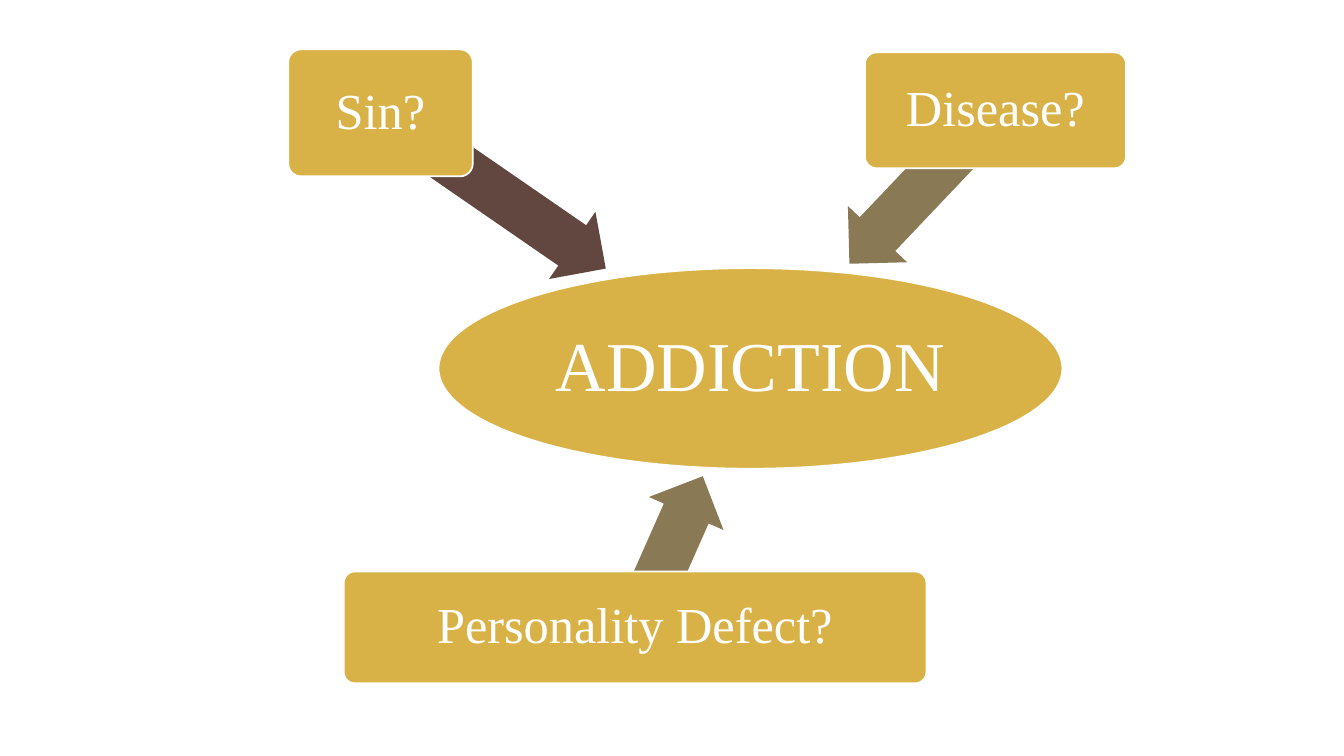
from pptx import Presentation
from pptx.dml.color import RGBColor
from pptx.enum.shapes import MSO_SHAPE as Shape
from pptx.enum.text import MSO_ANCHOR as Anchor, PP_ALIGN as Align
from pptx.util import Pt

GOLD, BROWN, OLIVE, WHITE = "D9B247", "614740", "8A7955", "FFFFFF"


def color(value):
    return RGBColor.from_string(value)


class Diagram:
    font = "Times New Roman"
    arrow_height = 58.3

    def __init__(self, page):
        self.page = page

    def shape(self, kind, bounds, fill):
        shape = self.page.shapes.add_shape(kind, *map(Pt, bounds))
        shape.shadow.inherit = False
        shape.fill.solid()
        shape.fill.fore_color.rgb = color(fill)
        return shape

    def node(self, kind, bounds, label, size, inset):
        """Add a gold shape with a white outline and a centred label."""
        node = self.shape(kind, bounds, GOLD)
        node.line.color.rgb = color(WHITE)
        node.line.width = Pt(1.25)
        frame = node.text_frame
        frame.word_wrap = True
        frame.vertical_anchor = Anchor.MIDDLE
        frame.margin_left = frame.margin_right = Pt(inset)
        frame.margin_top = frame.margin_bottom = Pt(inset)
        frame.text = label
        para = frame.paragraphs[0]
        para.alignment = Align.CENTER
        para.line_spacing = 0.9
        span = para.runs[0]
        span.font.name = self.font
        span.font.size = Pt(size)
        span.font.color.rgb = color(WHITE)
        return node

    def topic(self, bounds, label):
        self.node(Shape.OVAL, bounds, label, size=50, inset=2)

    def cause(self, bounds, label):
        box = self.node(Shape.ROUNDED_RECTANGLE, bounds, label, size=36, inset=5)
        box.adjustments[0] = 0.1

    def arrow(self, left, top, length, angle, fill):
        bounds = (left, top, length, self.arrow_height)
        arrow = self.shape(Shape.LEFT_ARROW, bounds, fill)
        arrow.line.fill.background()
        arrow.adjustments[0] = 0.6
        arrow.adjustments[1] = 0.5
        arrow.rotation = angle


def main():
    deck = Presentation()
    deck.slide_width, deck.slide_height = Pt(960), Pt(540)
    diagram = Diagram(deck.slides.add_slide(deck.slide_layouts[6]))

    diagram.topic((313.2, 191.5, 445.7, 143.3), "ADDICTION")
    causes = [
        ("Sin?", (205.9, 35.3, 131.8, 90.7), (254.9, 107.3, 195.1, 214.6, BROWN)),
        ("Disease?", (617.8, 37.4, 186.5, 82.8), (583.2, 104.4, 151.2, 313.5, OLIVE)),
        ("Personality Defect?", (245.5, 408.2, 416.2, 79.9),
         (419, 365, 118.1, 113.9, OLIVE)),
    ]
    for label, bounds, arrow in causes:
        diagram.arrow(*arrow)
        diagram.cause(bounds, label)

    deck.save("out.pptx")


if __name__ == "__main__":
    main()
